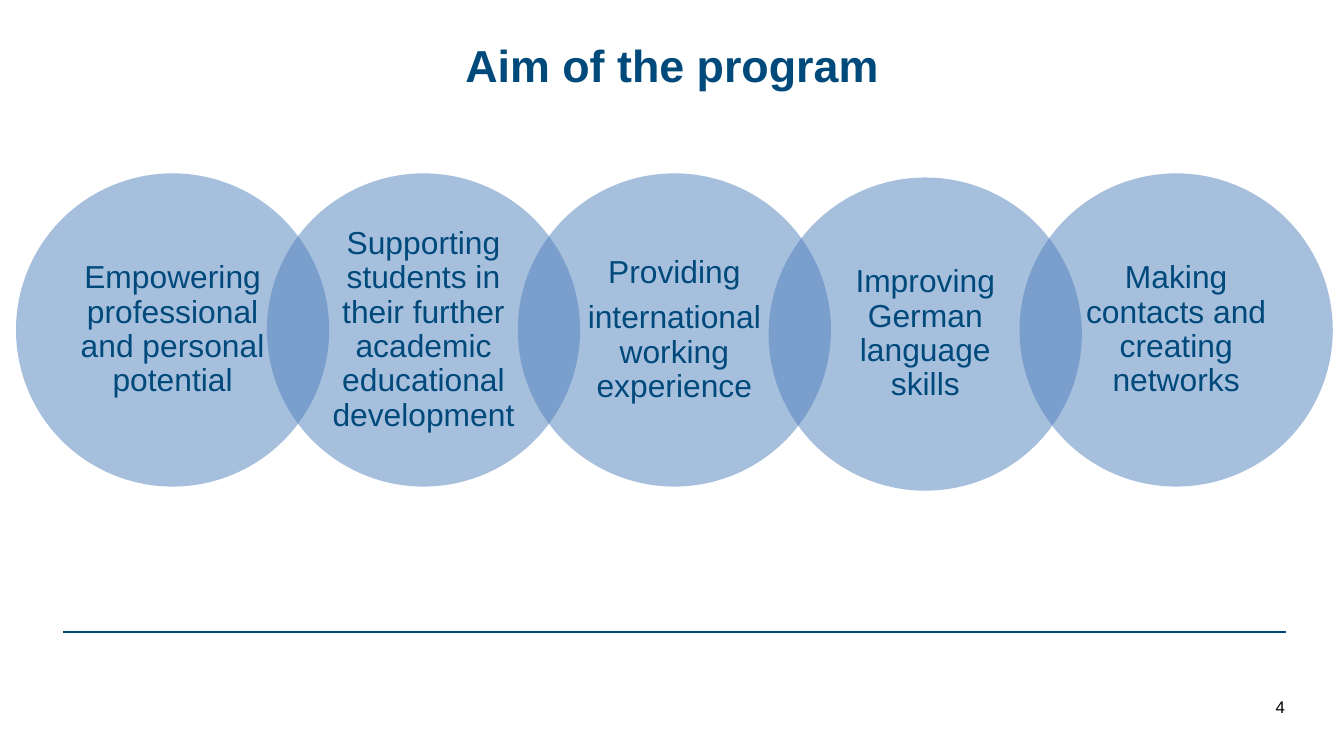
from lxml.etree import SubElement
from pptx import Presentation
from pptx.dml.color import RGBColor
from pptx.enum.shapes import MSO_CONNECTOR, MSO_SHAPE
from pptx.enum.text import MSO_ANCHOR as Anchor, PP_ALIGN as Align
from pptx.oxml.ns import qn
from pptx.util import Pt

# Content: paragraphs of each circle and its downward shift
TITLE = "Aim of the program"
PAGE_NUMBER = "4"
AIMS = [
    (["Empowering professional and personal potential"], 0),
    (["Supporting students in their further academic educational development"], 0),
    (["Providing", "international working experience"], 0),
    (["Improving German language skills"], 2.2),
    (["Making contacts and creating networks"], 0),
]

NAVY = RGBColor(0x00, 0x49, 0x7B)
BLUE = RGBColor(0x4F, 0x81, 0xBD)
BLACK = RGBColor(0x00, 0x00, 0x00)
FONT = "Arial"

# Circle row, in points
DIAMETER = 167.8
PITCH = 134.4
ROW_LEFT, ROW_TOP = 8.6, 92.9
LABEL_SIZE = 118.8
LABEL_OFFSET = (DIAMETER - LABEL_SIZE) / 2


def add_text(page, place, paragraphs, size, color, align, bold=False,
             anchor=Anchor.TOP, margins=(7.2, 3.6), line_spacing=1.0, space_after=0):
    box = page.shapes.add_textbox(*map(Pt, place))
    frame = box.text_frame
    frame.word_wrap = True
    frame.vertical_anchor = anchor
    frame.margin_left = frame.margin_right = Pt(margins[0])
    frame.margin_top = frame.margin_bottom = Pt(margins[1])
    for index, text in enumerate(paragraphs):
        para = frame.add_paragraph() if index else frame.paragraphs[0]
        para.alignment = align
        para.line_spacing = line_spacing
        para.space_after = Pt(space_after)
        span = para.add_run()
        span.text = text
        span.font.name = FONT
        span.font.size = Pt(size)
        span.font.bold = bold
        span.font.color.rgb = color


def add_circle(page, left, top):
    circle = page.shapes.add_shape(
        MSO_SHAPE.OVAL, Pt(left), Pt(top), Pt(DIAMETER), Pt(DIAMETER))
    circle.shadow.inherit = False
    circle.fill.solid()
    circle.fill.fore_color.rgb = BLUE
    circle.line.fill.background()
    # Half transparent, so that overlaps show darker
    color = circle._element.spPr.find(qn("a:solidFill")).find(qn("a:srgbClr"))
    SubElement(color, qn("a:alpha"), val="50000")


deck = Presentation()
deck.slide_width, deck.slide_height = Pt(720), Pt(405)
page = deck.slides.add_slide(deck.slide_layouts[6])

# Footer rule
rule = page.shapes.add_connector(
    MSO_CONNECTOR.STRAIGHT, Pt(33.8), Pt(338.4), Pt(689), Pt(338.4))
rule.line.color.rgb = NAVY
rule.line.width = Pt(1)
SubElement(rule._element.spPr, qn("a:effectLst"))

# Title and page number
add_text(page, (36, 16.6, 648, 67.7), [TITLE], 24, NAVY, Align.CENTER, bold=True)
add_text(page, (649.4, 367.9, 46.1, 21.6), [PAGE_NUMBER], 9, BLACK, Align.RIGHT,
         anchor=Anchor.MIDDLE)

# Overlapping circles with their labels
for index, (paragraphs, shift) in enumerate(AIMS):
    left, top = ROW_LEFT + index * PITCH, ROW_TOP + shift
    add_circle(page, left, top)
    add_text(page, (left + LABEL_OFFSET, top + LABEL_OFFSET, LABEL_SIZE, LABEL_SIZE),
             paragraphs, 17, NAVY, Align.CENTER, anchor=Anchor.MIDDLE,
             margins=(9.4, 1.4), line_spacing=0.9, space_after=6)

deck.save("out.pptx")
